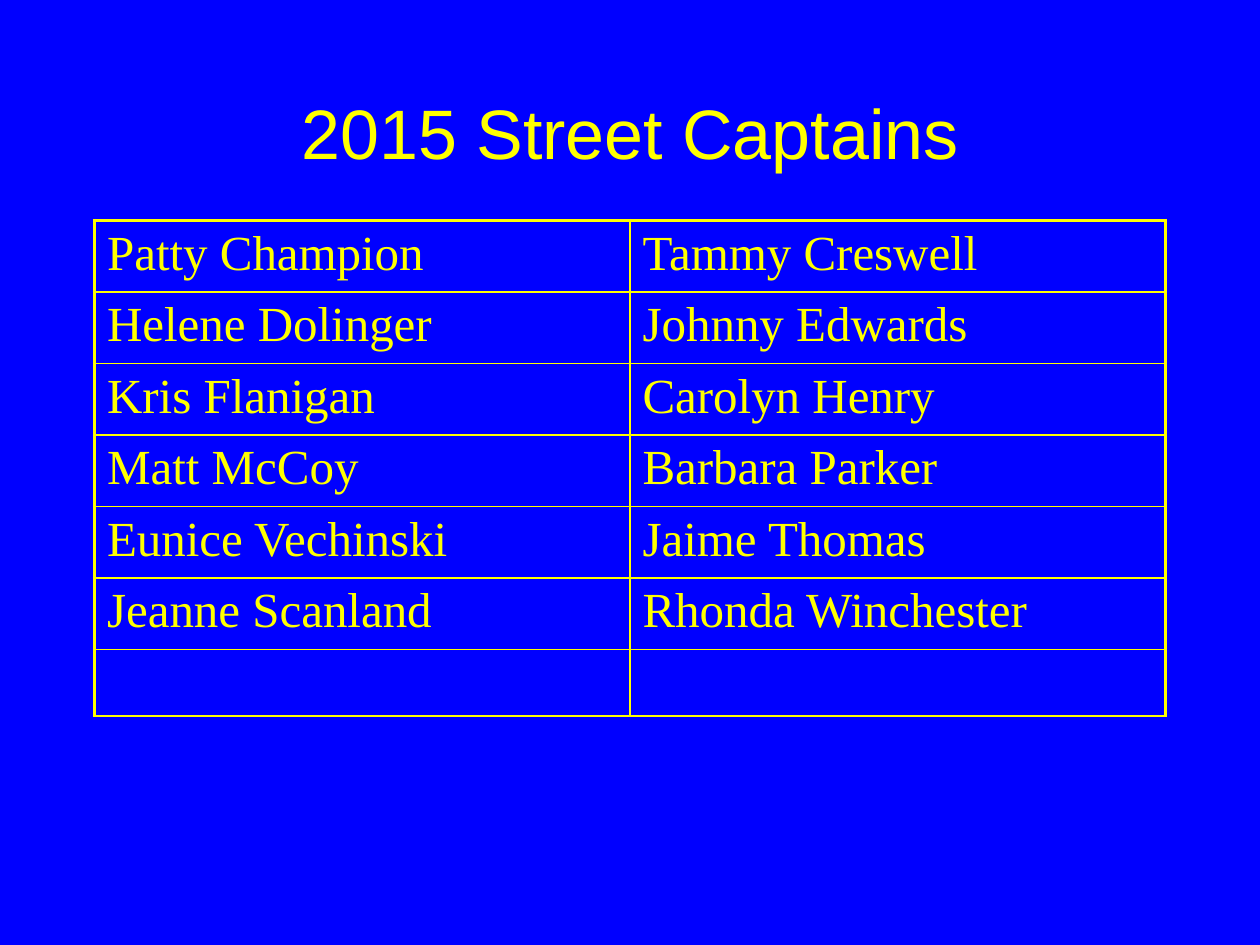
from dataclasses import dataclass

import pptx
import pptx.dml.color
import pptx.enum.text
import pptx.oxml
import pptx.oxml.ns
import pptx.util

Inches = pptx.util.Inches
Pt = pptx.util.Pt

COLORS = {"background": "0000FF", "accent": "FFFF00"}
OUTER_LINE, INNER_LINE = 2.25, 1
ROW_HEIGHT, COLUMN_WIDTH = 0.53, 4.25


@dataclass
class CaptainRow:
    left: str
    right: str


CAPTAINS = [
    CaptainRow("Patty Champion", "Tammy Creswell"),
    CaptainRow("Helene Dolinger", "Johnny Edwards"),
    CaptainRow("Kris Flanigan", "Carolyn Henry"),
    CaptainRow("Matt McCoy", "Barbara Parker"),
    CaptainRow("Eunice Vechinski", "Jaime Thomas"),
    CaptainRow("Jeanne Scanland", "Rhonda Winchester"),
    CaptainRow("", ""),
]


def rgb(name: str) -> pptx.dml.color.RGBColor:
    return pptx.dml.color.RGBColor.from_string(COLORS[name])


def write_text(frame, text: str, *, font: str, size: float, color: str = "accent",
               align=pptx.enum.text.PP_ALIGN.LEFT) -> None:
    paragraph = frame.paragraphs[0]
    paragraph.alignment = align
    if text:
        run = paragraph.add_run()
        run.text = text
        run.font.name = font
        run.font.size = Pt(size)
        run.font.color.rgb = rgb(color)


def set_borders(cell, widths: dict[str, float]) -> None:
    """Draw the cell edges, in the order left, right, top, bottom."""
    properties = cell._tc.get_or_add_tcPr()
    for position, (side, width) in enumerate(widths.items()):
        properties.insert(position, pptx.oxml.parse_xml(
            f'<a:ln{side} {pptx.oxml.ns.nsdecls("a")} w="{Pt(width)}"><a:solidFill>'
            f'<a:srgbClr val="{COLORS["accent"]}"/></a:solidFill></a:ln{side}>'))


def add_title(slide, text: str) -> None:
    title = slide.shapes.add_textbox(Inches(0.75), Inches(0.67), Inches(8.5), Inches(0.75))
    title.text_frame.word_wrap = True
    title.text_frame.vertical_anchor = pptx.enum.text.MSO_ANCHOR.MIDDLE
    write_text(title.text_frame, text, font="Arial", size=40,
               align=pptx.enum.text.PP_ALIGN.CENTER)


def add_captains(slide, captains: list[CaptainRow]) -> None:
    table = slide.shapes.add_table(
        len(captains), 2, Inches(0.75), Inches(1.75),
        Inches(2 * COLUMN_WIDTH), Inches(len(captains) * ROW_HEIGHT)).table
    table.first_row = table.horz_banding = False
    for column in table.columns:
        column.width = Inches(COLUMN_WIDTH)
    for row, captain in enumerate(captains):
        table.rows[row].height = Inches(ROW_HEIGHT)
        for column, name in enumerate((captain.left, captain.right)):
            cell = table.cell(row, column)
            cell.fill.background()
            write_text(cell.text_frame, name, font="Times New Roman", size=28)
            set_borders(cell, {
                "L": OUTER_LINE if column == 0 else INNER_LINE,
                "R": OUTER_LINE if column == 1 else INNER_LINE,
                "T": OUTER_LINE if row == 0 else INNER_LINE,
                "B": INNER_LINE,
            })


def main() -> None:
    presentation = pptx.Presentation()
    presentation.slide_width = Inches(10)
    presentation.slide_height = Inches(7.5)
    slide = presentation.slides.add_slide(presentation.slide_layouts[6])

    # Background
    slide.background.fill.solid()
    slide.background.fill.fore_color.rgb = rgb("background")

    # Title and table of names
    add_title(slide, "2015 Street Captains")
    add_captains(slide, CAPTAINS)
    presentation.save("out.pptx")


if __name__ == "__main__":
    main()
